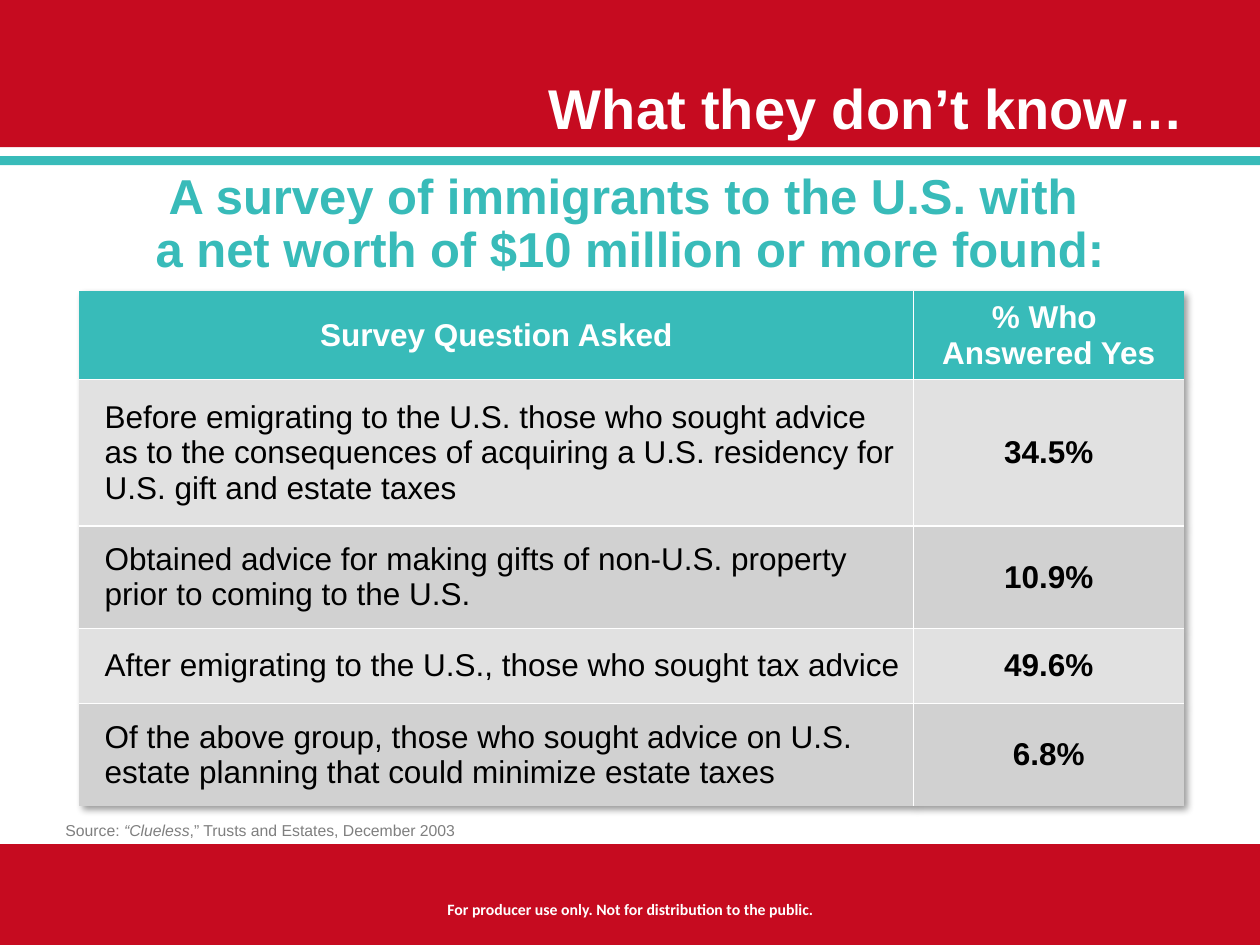
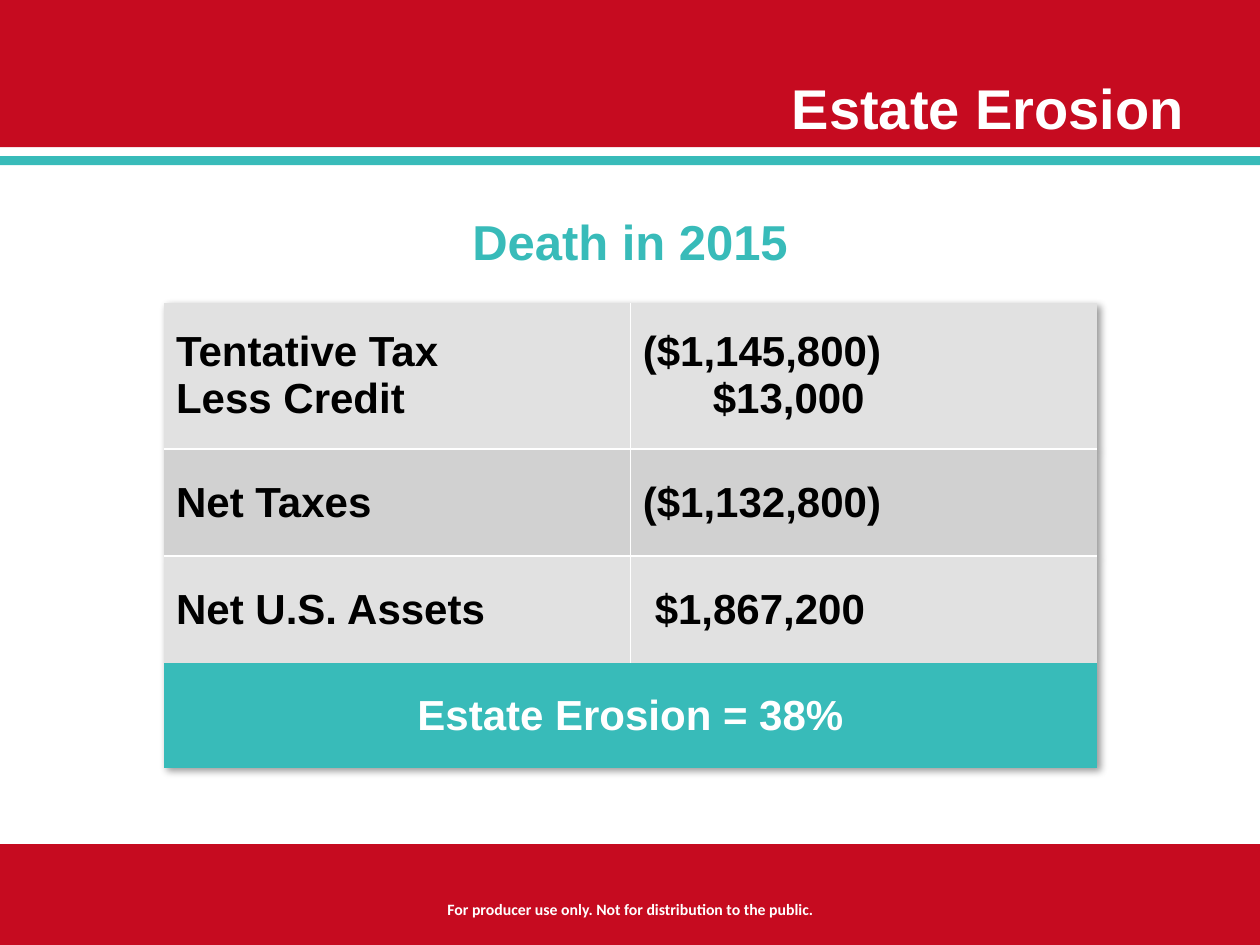
from lxml.etree import SubElement
from pptx import Presentation
from pptx.dml.color import RGBColor
from pptx.enum.shapes import MSO_SHAPE
from pptx.enum.text import MSO_ANCHOR, PP_ALIGN
from pptx.oxml import parse_xml
from pptx.oxml.ns import nsdecls, qn
from pptx.util import Cm, Pt

WIDTH, HEIGHT = 25.4, 19.05
TITLE_ONLY = 5
TABLE_SHADOW = (
    f'<a:effectLst {nsdecls("a")}><a:outerShdw blurRad="50800" dist="38100" dir="2700000" '
    'algn="tl" rotWithShape="0"><a:srgbClr val="000000"><a:alpha val="40000"/>'
    "</a:srgbClr></a:outerShdw></a:effectLst>"
)


def colour(value):
    return RGBColor.from_string(value)


class SurveyDeck:
    RED, TEAL, WHITE, BLACK, GREY = "C60B20", "38BBB9", "FFFFFF", "000000", "7F7F7F"
    ROW_FILLS = ("E1E1E1", "D1D1D1")
    FOOTER = "For producer use only. Not for distribution to the public."

    def __init__(self):
        self.deck = Presentation()
        self.deck.slide_width, self.deck.slide_height = Cm(WIDTH), Cm(HEIGHT)
        self.page = None

    def start_page(self, title):
        self.page = self.deck.slides.add_slide(self.deck.slide_layouts[TITLE_ONLY])
        self.band(0, 2.97, self.RED)
        self.band(3.15, 0.18, self.TEAL)
        self.band(17.02, HEIGHT - 17.02, self.RED)
        self.text(7.65, 18.01, 10.11, 0.64, [self.FOOTER], size=9, font="Calibri",
                  shade=self.WHITE, bold=True, align=PP_ALIGN.CENTER)
        self.title(title)

    def title(self, words):
        box = self.page.shapes.title
        self.page.shapes._spTree.append(box._element)  # in front of the bands
        box.left, box.top, box.width, box.height = Cm(1.27), Cm(0.1), Cm(22.86), Cm(2.87)
        box.text_frame.vertical_anchor = MSO_ANCHOR.BOTTOM
        para = box.text_frame.paragraphs[0]
        para.alignment = PP_ALIGN.RIGHT
        self.span(para, words, 32, self.WHITE, bold=True)

    def band(self, top, height, fill):
        band = self.page.shapes.add_shape(MSO_SHAPE.RECTANGLE, 0, Cm(top), Cm(WIDTH), Cm(height))
        band.shadow.inherit = False
        band.fill.solid()
        band.fill.fore_color.rgb = colour(fill)
        band.line.fill.background()

    def span(self, para, words, size, shade, bold=False, italic=False, font="Arial"):
        """Add one run per line of words, with line breaks between them."""
        for number, line in enumerate(words.split("\n")):
            if number:
                para.add_line_break()
            span = para.add_run()
            span.text = line
            span.font.name, span.font.size = font, Pt(size)
            span.font.bold, span.font.italic = bold, italic
            span.font.color.rgb = colour(shade)

    def text(self, left, top, width, height, spans, size, shade, bold=False, font="Arial",
             align=PP_ALIGN.LEFT, anchor=MSO_ANCHOR.TOP, spacing=None, inset=None):
        """Add a one-paragraph box; every second span is italic."""
        box = self.page.shapes.add_textbox(Cm(left), Cm(top), Cm(width), Cm(height))
        frame = box.text_frame
        frame.word_wrap = True
        frame.vertical_anchor = anchor
        if inset is not None:
            frame.margin_left = frame.margin_right = Cm(inset)
            frame.margin_top = frame.margin_bottom = Cm(inset)
        para = frame.paragraphs[0]
        para.alignment, para.line_spacing = align, spacing
        for number, words in enumerate(spans):
            self.span(para, words, size, shade, bold, number % 2 == 1, font)

    def heading(self, top, height, words):
        self.text(0, top, WIDTH, height, [words], size=28, shade=self.TEAL, bold=True,
                  align=PP_ALIGN.CENTER, anchor=MSO_ANCHOR.MIDDLE, spacing=0.9)

    def table(self, left, top, columns, rows):
        frame = self.page.shapes.add_table(len(rows), len(columns), Cm(left), Cm(top),
                                           Cm(sum(columns)), Cm(sum(rows)))
        table = frame.table
        table.first_row = table.horz_banding = False
        table._tbl.tblPr.insert(0, parse_xml(TABLE_SHADOW))
        for column, width in zip(table.columns, columns):
            column.width = Cm(width)
        for row, height in zip(table.rows, rows):
            row.height = Cm(height)
        return table

    def cell(self, cell, lines, fill, size, shade, bold=True, align=PP_ALIGN.LEFT,
             inset=0.25, right=None, rules=""):
        """Fill a cell with (words, indent) lines; rules names its white sides among L, R, T, B."""
        properties = cell._tc.get_or_add_tcPr()
        for side in "LRTB":
            line = SubElement(properties, qn(f"a:ln{side}"), w=str(Pt(1)))
            if side in rules:
                paint = SubElement(line, qn("a:solidFill"))
                SubElement(paint, qn("a:srgbClr"), val=self.WHITE)
            else:
                SubElement(line, qn("a:noFill"))
        cell.fill.solid()
        cell.fill.fore_color.rgb = colour(fill)
        cell.vertical_anchor = MSO_ANCHOR.MIDDLE
        cell.margin_left = Cm(inset)
        cell.margin_right = Cm(inset if right is None else right)
        cell.margin_top = cell.margin_bottom = Cm(0.13)
        for number, (words, indent) in enumerate(lines):
            para = cell.text_frame.add_paragraph() if number else cell.text_frame.paragraphs[0]
            para.alignment = align
            if indent:
                para._p.get_or_add_pPr().set("marL", str(Cm(indent)))
            self.span(para, words, size, shade, bold)


def inner_rules(row, column, row_count):
    """Name the sides of a two-column cell that face another cell."""
    return ("R" if column == 0 else "L") + "T" * (row > 0) + "B" * (row < row_count - 1)


def survey_page(survey):
    survey.start_page("What they don’t know…")
    survey.heading(3.25, 2.59, "A survey of immigrants to the U.S. with \n"
                               "a net worth of $10 million or more found:")
    survey.text(1.32, 16.54, 22.43, 0.38,
                ["Source: ", "“Clueless", ",” Trusts and Estates, December 2003"],
                size=9, shade=survey.GREY, anchor=MSO_ANCHOR.MIDDLE, inset=0)
    answers = [
        ("Survey Question Asked", "% Who \nAnswered Yes"),
        ("Before emigrating to the U.S. those who sought advice as to the consequences of "
         "acquiring a U.S. residency for U.S. gift and estate taxes", "34.5%"),
        ("Obtained advice for making gifts of non-U.S. property prior to coming to the U.S.",
         "10.9%"),
        ("After emigrating to the U.S., those who sought tax advice", "49.6%"),
        ("Of the above group, those who sought advice on U.S. estate planning that could "
         "minimize estate taxes", "6.8%"),
    ]
    table = survey.table(1.6, 5.87, [16.81, 5.46], [1.78, 2.95, 2.06, 1.52, 2.06])
    for row, pair in enumerate(answers):
        header = row == 0
        for column, words in enumerate(pair):
            question = column == 0 and not header
            survey.cell(
                table.cell(row, column), [(words, 0)],
                fill=survey.TEAL if header else survey.ROW_FILLS[(row - 1) % 2],
                size=18, shade=survey.WHITE if header else survey.BLACK, bold=not question,
                align=PP_ALIGN.LEFT if question else PP_ALIGN.CENTER,
                inset=0.51 if question else 0.13, right=0.13,
                rules=inner_rules(row, column, len(answers)))


def erosion_page(survey):
    survey.start_page("Estate Erosion")
    survey.heading(3.96, 1.96, "Death in 2015")
    amounts = [
        ([("Tentative Tax", 0), ("Less Credit", 0)], [("($1,145,800)", 0), ("$13,000", 1.41)]),
        ([("Net Taxes", 0)], [("($1,132,800)", 0)]),
        ([("Net U.S. Assets", 0)], [("$1,867,200", 0.24)]),
    ]
    table = survey.table(3.3, 6.1, [9.41, 9.41], [2.95, 2.16, 2.16, 2.11])
    for row, pair in enumerate(amounts):
        for column, lines in enumerate(pair):
            survey.cell(table.cell(row, column), lines, survey.ROW_FILLS[row % 2], 24,
                        survey.BLACK, rules=inner_rules(row, column, len(amounts)))
    total = table.cell(len(amounts), 0)
    total.merge(table.cell(len(amounts), 1))
    survey.cell(total, [("Estate Erosion = 38%", 0)], survey.TEAL, 24, survey.WHITE,
                align=PP_ALIGN.CENTER)


def main():
    survey = SurveyDeck()
    survey_page(survey)
    erosion_page(survey)
    survey.deck.save("out.pptx")


if __name__ == "__main__":
    main()
